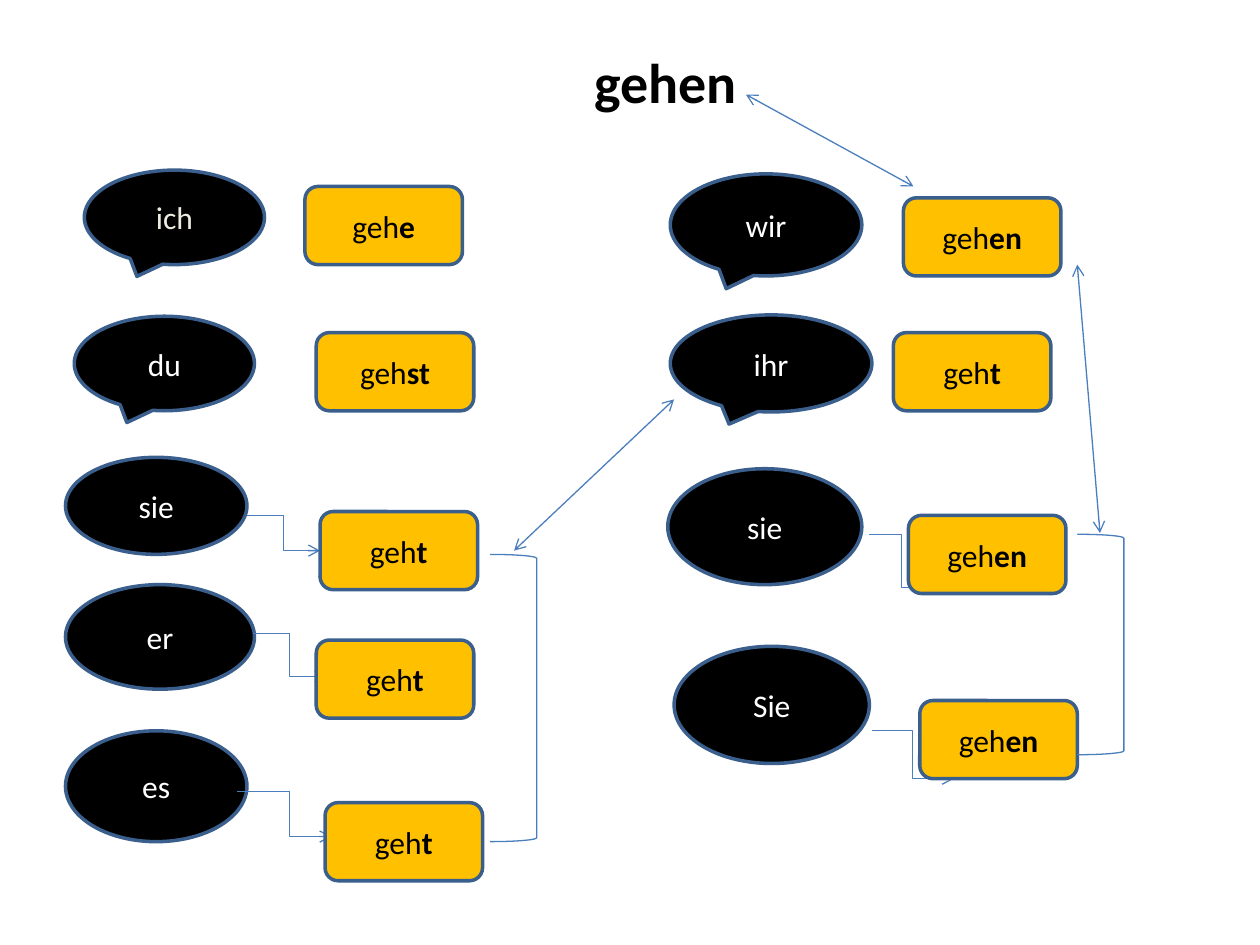
from lxml import etree
from pptx import Presentation
from pptx import util as u
from pptx.dml.color import RGBColor
from pptx.enum import shapes, text
from pptx.oxml.ns import qn

HUES = {"black": "000000", "white": "FFFFFF", "cream": "EEECE1",
        "gold": "FFC000", "edge": "3A5F8C", "link": "4B7EBC"}
KIND = shapes.MSO_SHAPE
CALL, OVAL = KIND.OVAL_CALLOUT, KIND.OVAL

# kind, pronoun, left, top, width, height
PRONOUNS = [
    (CALL, "ich", 0.67, 1.35, 1.43, 0.75),
    (CALL, "du", 0.59, 2.51, 1.43, 0.75),
    (OVAL, "sie", 0.52, 3.63, 1.44, 0.77),
    (OVAL, "er", 0.52, 4.64, 1.5, 0.83),
    (OVAL, "es", 0.52, 5.8, 1.44, 0.88),
    (CALL, "wir", 5.32, 1.38, 1.52, 0.81),
    (CALL, "ihr", 5.32, 2.5, 1.6, 0.77),
    (OVAL, "sie", 5.3, 3.72, 1.54, 0.92),
    (OVAL, "Sie", 5.35, 5.13, 1.55, 0.93),
]
# ending, left, top
VERBS = [
    ("e", 2.42, 1.48), ("st", 2.51, 2.64), ("t", 2.54, 4.06),
    ("t", 2.51, 5.08), ("t", 2.58, 6.37), ("en", 7.17, 1.57),
    ("t", 7.09, 2.64), ("en", 7.21, 4.09), ("en", 7.3, 5.56),
]
# start x, start y, end x, end y, place of the bend
ELBOWS = [
    (1.96, 4.09, 2.54, 4.37, 0.5), (2.01, 5.03, 2.59, 5.37, 0.5),
    (1.88, 6.28, 2.63, 6.64, 0.56), (6.9, 4.24, 7.41, 4.66, 0.5),
    (6.92, 5.8, 7.57, 6.18, 0.5),
]
ARROWS = [(4.08, 4.37, 5.35, 3.17), (5.92, 0.75, 7.25, 1.48),
          (8.55, 2.1, 8.73, 4.23)]
BRACKETS = [(3.89, 4.4, 0.37, 2.28), (8.55, 4.24, 0.37, 1.75)]


def rgb(name):
    return RGBColor.from_string(HUES[name])


def write(frame, *parts, size=18, hue="black", anchor=text.MSO_ANCHOR.MIDDLE):
    """Fill a frame with one centred line of (words, bold) parts."""
    frame.word_wrap = True
    frame.vertical_anchor = anchor
    para = frame.paragraphs[0]
    para.alignment = text.PP_ALIGN.CENTER
    for words, bold in parts:
        run = para.add_run()
        run.text = words
        font = run.font
        font.name, font.size, font.bold = "Calibri", u.Pt(size), bold
        font.color.rgb = rgb(hue)


class Board:
    """The current slide and the style of its elements."""
    edge, thin = 2, 0.75

    def __init__(self, slide):
        self.slide = slide

    def title(self, words, *box):
        head = self.slide.shapes.title
        head.left, head.top, head.width, head.height = map(u.Inches, box)
        write(head.text_frame, (words, True), size=32,
              anchor=text.MSO_ANCHOR.TOP)

    def stroke(self, item, hue, width):
        item.line.color.rgb = rgb(hue)
        item.line.width = u.Pt(width)

    def shape(self, kind, box, fill, hue, width):
        item = self.slide.shapes.add_shape(kind, *map(u.Inches, box))
        item.shadow.inherit = False
        if fill:
            item.fill.solid()
            item.fill.fore_color.rgb = rgb(fill)
        else:
            item.fill.background()
        self.stroke(item, hue, width)
        return item

    def bubble(self, kind, word, *box):
        item = self.shape(kind, box, "black", "edge", self.edge)
        write(item.text_frame, (word, False),
              hue="cream" if word == "ich" else "white")

    def card(self, ending, left, top):
        item = self.shape(KIND.ROUNDED_RECTANGLE, (left, top, 1.25, 0.62),
                          "gold", "edge", self.edge)
        write(item.text_frame, ("geh", False), (ending, True))

    def bracket(self, *box):
        self.shape(KIND.RIGHT_BRACKET, box, None, "link", self.thin)

    def link(self, kind, ends, tips):
        item = self.slide.shapes.add_connector(kind, *map(u.Inches, ends))
        self.stroke(item, "link", self.thin)
        line = item.line._get_or_add_ln()
        for tip in tips:
            etree.SubElement(line, qn(tip), type="arrow")
        etree.SubElement(item._element.spPr, qn("a:effectLst"))
        return item

    def elbow(self, *ends, bend):
        item = self.link(shapes.MSO_CONNECTOR.ELBOW, ends, ["a:tailEnd"])
        geom = item._element.spPr.find(qn("a:prstGeom"))
        guides = geom.find(qn("a:avLst"))
        if guides is None:
            guides = etree.SubElement(geom, qn("a:avLst"))
        etree.SubElement(guides, qn("a:gd"), name="adj1",
                         fmla=f"val {round(bend * 100000)}")

    def arrow(self, *ends):
        self.link(shapes.MSO_CONNECTOR.STRAIGHT, ends,
                  ["a:headEnd", "a:tailEnd"])


def main():
    deck = Presentation()
    deck.slide_width, deck.slide_height = u.Inches(10), u.Inches(7.5)
    board = Board(deck.slides.add_slide(deck.slide_layouts[5]))
    board.title("gehen", 3.06, 0.33, 4.45, 0.64)
    for item in PRONOUNS:
        board.bubble(*item)
    for *ends, bend in ELBOWS:
        board.elbow(*ends, bend=bend)
    for item in VERBS:
        board.card(*item)
    for box in BRACKETS:
        board.bracket(*box)
    for ends in ARROWS:
        board.arrow(*ends)
    deck.save("out.pptx")


if __name__ == "__main__":
    main()
